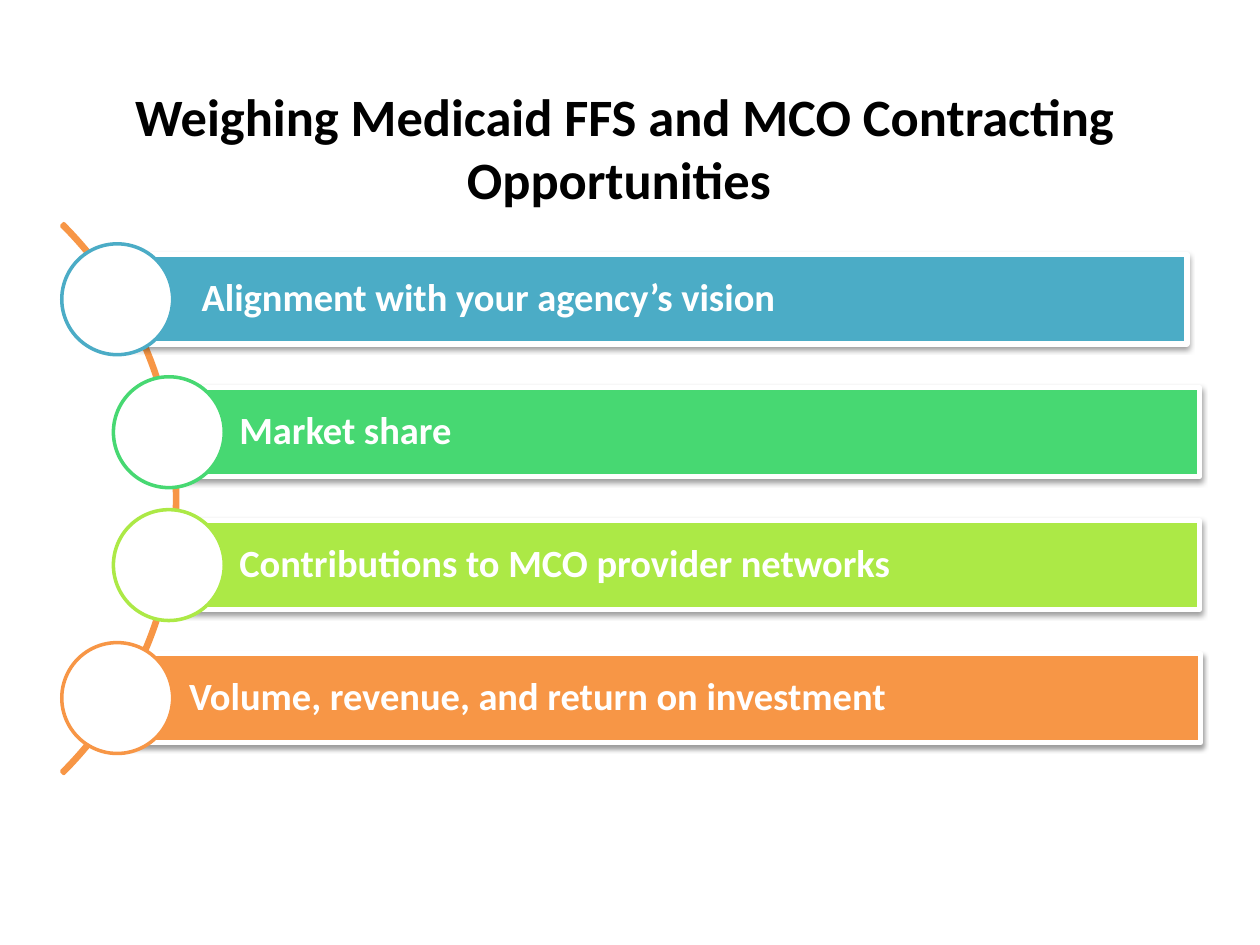
from dataclasses import dataclass

from lxml import etree
from pptx import Presentation
from pptx import util as u
from pptx.dml.color import RGBColor
from pptx.enum import shapes, text
from pptx.oxml.ns import qn

BLACK = RGBColor(0x00, 0x00, 0x00)
WHITE = RGBColor(0xFF, 0xFF, 0xFF)
TEAL = RGBColor(0x4B, 0xAC, 0xC6)
GREEN = RGBColor(0x47, 0xD8, 0x72)
LIME = RGBColor(0xAC, 0xE9, 0x46)
ORANGE = RGBColor(0xF7, 0x96, 0x46)

CELL = 0.1
FIRST_ROW = 23.75
ROW_STEP = 10.55
BAR_HEIGHT = 7.1
CIRCLE_SIZE = 8.8
ARC_SIZE = 61.7
ARC_RIGHT = 14.1


@dataclass(frozen=True)
class Factor:
    label: str
    color: RGBColor
    circle_center: float
    bar_left: float
    bar_right: float


FACTORS = [
    Factor("Alignment with your agency’s vision", TEAL, 9.3, 10.4, 94.2),
    Factor("Market share", GREEN, 13.4, 13.4, 95.2),
    Factor("Contributions to MCO provider networks", LIME, 13.4, 13.4, 95.2),
    Factor("Volume, revenue, and return on investment", ORANGE, 9.3, 9.4, 95.3),
]


def grid(cells: float) -> u.Emu:
    return u.Inches(cells * CELL)


def write(shape, content: str, *, size: float, color: RGBColor,
          align=text.PP_ALIGN.LEFT, spacing: float | None = None) -> None:
    frame = shape.text_frame
    frame.word_wrap = True
    frame.vertical_anchor = text.MSO_ANCHOR.MIDDLE
    paragraph = frame.paragraphs[0]
    paragraph.alignment = align
    paragraph.line_spacing = spacing
    run = paragraph.add_run()
    run.text = content
    run.font.name = "Calibri"
    run.font.size = u.Pt(size)
    run.font.bold = True
    run.font.color.rgb = color


def add_outline(slide, kind, left: float, top: float, width: float, height: float, *,
                line: RGBColor, weight: float, fill: RGBColor | None = None):
    shape = slide.shapes.add_shape(kind, grid(left), grid(top), grid(width), grid(height))
    shape.shadow.inherit = False
    if fill is None:
        shape.fill.background()
    else:
        shape.fill.solid()
        shape.fill.fore_color.rgb = fill
    shape.line.color.rgb = line
    shape.line.width = u.Pt(weight)
    return shape


def add_shadow(shape) -> None:
    effects = shape.element.spPr.find(qn("a:effectLst"))
    shadow = etree.SubElement(effects, qn("a:outerShdw"), blurRad=str(u.Pt(3.1)),
                              dist=str(u.Pt(1.6)), dir="5400000", rotWithShape="0")
    color = etree.SubElement(shadow, qn("a:srgbClr"), val=str(BLACK))
    etree.SubElement(color, qn("a:alpha"), val="38000")


def add_factor(slide, factor: Factor, middle: float) -> None:
    bar = add_outline(slide, shapes.MSO_SHAPE.RECTANGLE, factor.bar_left,
                      middle - BAR_HEIGHT / 2, factor.bar_right - factor.bar_left,
                      BAR_HEIGHT, line=WHITE, weight=3, fill=factor.color)
    add_shadow(bar)
    frame = bar.text_frame
    frame.margin_left = grid(5.6)
    frame.margin_right = frame.margin_top = frame.margin_bottom = grid(0.6)
    write(bar, factor.label, size=22, color=WHITE, spacing=0.9)
    add_outline(slide, shapes.MSO_SHAPE.OVAL, factor.circle_center - CIRCLE_SIZE / 2,
                middle - CIRCLE_SIZE / 2, CIRCLE_SIZE, CIRCLE_SIZE,
                line=factor.color, weight=2, fill=WHITE)


def add_arc(slide) -> None:
    middle = FIRST_ROW + ROW_STEP * (len(FACTORS) - 1) / 2
    arc = add_outline(slide, shapes.MSO_SHAPE.BLOCK_ARC, ARC_RIGHT - ARC_SIZE,
                      middle - ARC_SIZE / 2, ARC_SIZE, ARC_SIZE, line=ORANGE, weight=2)
    for index, value in enumerate((189, 27, 0.004)):
        arc.adjustments[index] = value


def main() -> None:
    presentation = Presentation()
    presentation.slide_width = u.Inches(10)
    presentation.slide_height = u.Inches(7.5)
    slide = presentation.slides.add_slide(presentation.slide_layouts[5])

    title = slide.shapes.title
    title.left, title.top, title.width, title.height = map(grid, (5, 6.7, 89.2, 10))
    write(title, "Weighing Medicaid FFS and MCO Contracting Opportunities ",
          size=30, color=BLACK, align=text.PP_ALIGN.CENTER)

    add_arc(slide)
    for row, factor in enumerate(FACTORS):
        add_factor(slide, factor, FIRST_ROW + row * ROW_STEP)

    presentation.save("out.pptx")


if __name__ == "__main__":
    main()
